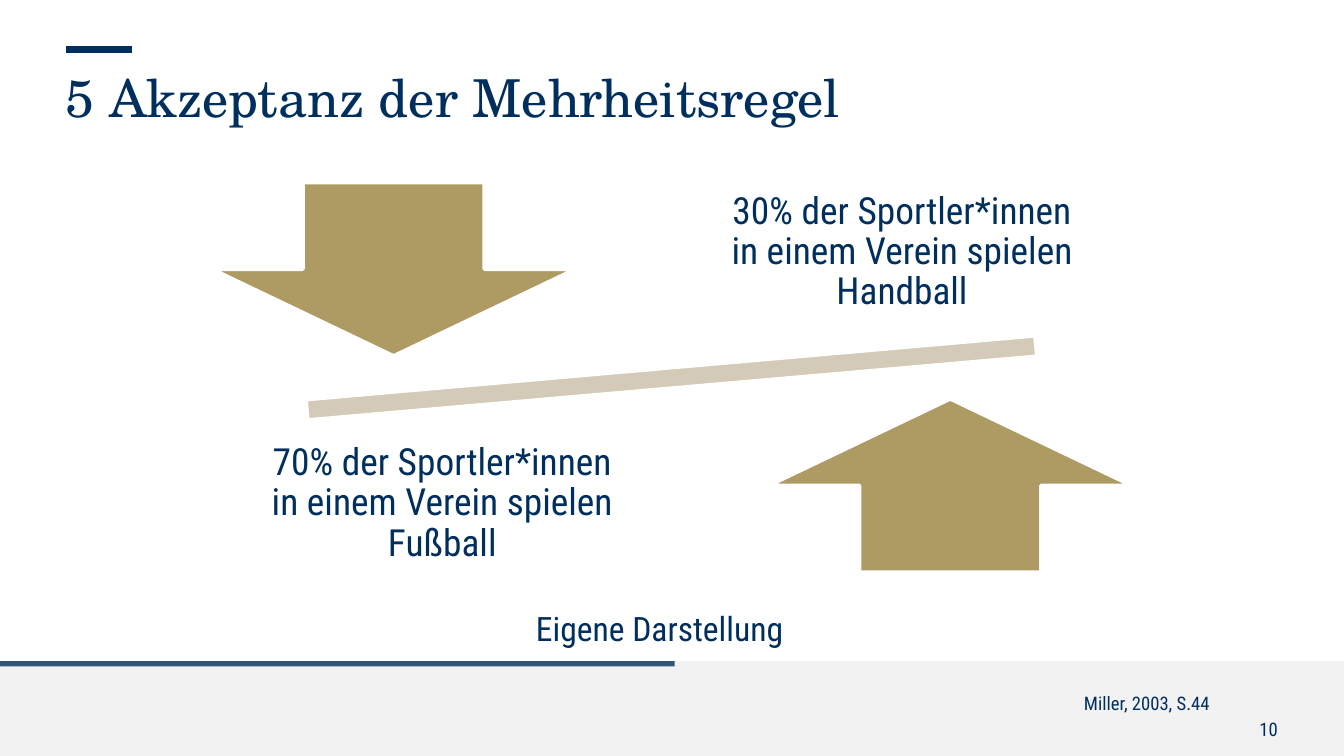
"""Build a slide that weighs a majority against a minority on a tilted beam."""
import pptx
import pptx.dml.color
import pptx.enum.shapes
import pptx.enum.text
import pptx.oxml.ns
import pptx.util
from lxml import etree

Cm = pptx.util.Cm
Pt = pptx.util.Pt
RGB = pptx.dml.color.RGBColor
Kind = pptx.enum.shapes.MSO_SHAPE
Align = pptx.enum.text.PP_ALIGN
Anchor = pptx.enum.text.MSO_ANCHOR
Fit = pptx.enum.text.MSO_AUTO_SIZE
qn = pptx.oxml.ns.qn

hues = {"navy": "002F5D", "gold": "AE9A63", "sand": "D3CAB7", "grey": "F2F2F2", "white": "FFFFFF"}
hues = {name: RGB.from_string(code) for name, code in hues.items()}

deck = pptx.Presentation()
deck.slide_width, deck.slide_height = Cm(25.4), Cm(14.29)
slide = deck.slides.add_slide(deck.slide_layouts[5])
shapes = slide.shapes


def draw(kind, box, fill, edge=None):
    shape = shapes.add_shape(kind, *map(Cm, box))
    shape.shadow.inherit = False
    shape.fill.solid()
    shape.fill.fore_color.rgb = hues[fill]
    if edge:
        shape.line.color.rgb = hues[edge]
        shape.line.width = Pt(2)
    else:
        shape.line.fill.background()
    return shape


def write(shape, box, text, size, align, inset=0, font="Roboto Condensed"):
    shape.left, shape.top, shape.width, shape.height = map(Cm, box)
    frame = shape.text_frame
    frame.text = text
    frame.word_wrap = True
    frame.auto_size = Fit.NONE
    frame.vertical_anchor = Anchor.TOP
    frame.margin_left = frame.margin_right = Cm(inset)
    frame.margin_top = frame.margin_bottom = Cm(inset)
    para = frame.paragraphs[0]
    para.alignment = align
    face = para.runs[0].font
    face.name, face.size = font, Pt(size)
    face.color.rgb = hues["navy"]
    return frame


draw(Kind.RECTANGLE, (0, 12.5, 25.4, 1.79), "grey")
bar = draw(Kind.RECTANGLE, (0, 12.5, 12.75, 0.1), "navy")
tint = bar.fill._xPr.find(qn("a:solidFill"))[0]
etree.SubElement(tint, qn("a:alpha"), val="80000")

rule = shapes.add_connector(
    pptx.enum.shapes.MSO_CONNECTOR.STRAIGHT, Cm(1.24), Cm(0.94), Cm(2.49), Cm(0.94))
rule.line.color.rgb = hues["navy"]
rule.line.width = Pt(3.5)
etree.SubElement(rule._element.spPr, qn("a:effectLst"))

write(shapes.title, (1.24, 1.24, 22.89, 1.6), "5 Akzeptanz der Mehrheitsregel",
      28, Align.LEFT, font="TeX Gyre Schola")

beam = draw(Kind.MATH_MINUS, (3.28, 6.32, 18.82, 1.65), "sand", "white")
beam.rotation = 355

sides = [
    (Kind.DOWN_ARROW, 4.01, 3.45, 13.39, 3.05, "30% der Sportler*innen in einem Verein spielen Handball"),
    (Kind.UP_ARROW, 14.53, 7.54, 4.7, 7.8, "70% der Sportler*innen in einem Verein spielen Fußball"),
]
for kind, left, top, x, y, text in sides:
    draw(kind, (left, top, 6.86, 3.28), "gold", "white")
    box = (x, y, 7.32, 3.45)
    frame = write(shapes.add_textbox(*map(Cm, box)), box, text, 20, Align.CENTER, 0.41)
    frame.vertical_anchor = Anchor.MIDDLE
    frame.paragraphs[0].line_spacing = 0.9

notes = [
    ((9.88, 11.25, 5.66, 1.02), "Eigene Darstellung", 18, Align.LEFT, 0.25),
    ((8.33, 13.08, 14.53, 0.46), "Miller, 2003, S.44", 10, Align.RIGHT, 0),
    ((22.89, 13.56, 1.26, 0.43), "10", 10, Align.RIGHT, 0),
]
for box, text, size, align, inset in notes:
    write(shapes.add_textbox(*map(Cm, box)), box, text, size, align, inset)

deck.save("out.pptx")
